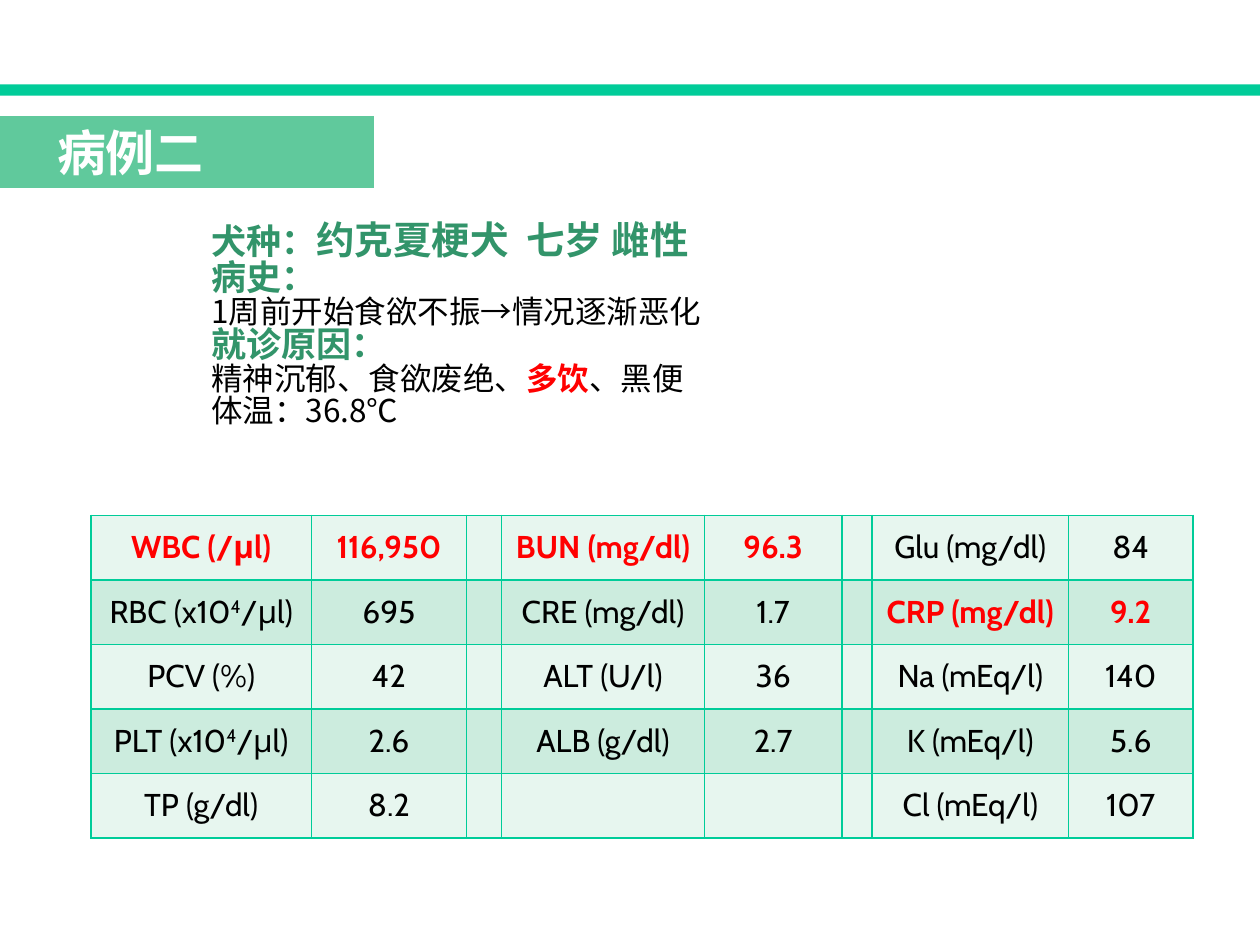
from lxml import etree
from pptx import Presentation
from pptx.dml.color import RGBColor
from pptx.enum.shapes import MSO_SHAPE
from pptx.enum.text import MSO_ANCHOR, MSO_AUTO_SIZE, PP_ALIGN
from pptx.oxml.ns import qn
from pptx.util import Cm, Pt

RECT = MSO_SHAPE.RECTANGLE
MIDDLE = MSO_ANCHOR.MIDDLE
FIXED = MSO_AUTO_SIZE.NONE
LEFT, CENTER = PP_ALIGN.LEFT, PP_ALIGN.CENTER

THEME = {
    "bar": "00CC99", "tag": "60C99C", "bands": ("E7F6EF", "CCECDE"),
    "latin": "Cabin", "asian": "Noto Sans CJK SC",
    "title": (28, "FFFFFF", True), "lead": (22, "32946A", True),
    "head": (20, "32946A", True), "text": (18, "000000", False),
    "alert": (18, "FF0000", True),
}

TITLE = "病例二"
HISTORY = [
    [("犬种：", "head"), ("约克夏梗犬  七岁 雌性", "lead")],
    [("病史：", "head")],
    [("1周前开始食欲不振→情况逐渐恶化", "text")],
    [("就诊原因：", "head")],
    [("精神沉郁、食欲废绝、", "text"), ("多饮", "alert"), ("、黑便", "text")],
    [("体温：36.8℃", "text")],
]
TESTS = [
    ["WBC (/μl)", "116,950", "", "BUN (mg/dl)", "96.3", "", "Glu (mg/dl)", "84"],
    ["RBC (x10^4^/μl)", "695", "", "CRE (mg/dl)", "1.7", "", "CRP (mg/dl)", "9.2"],
    ["PCV (%)", "42", "", "ALT (U/l)", "36", "", "Na (mEq/l)", "140"],
    ["PLT (x10^4^/μl)", "2.6", "", "ALB (g/dl)", "2.7", "", "K (mEq/l)", "5.6"],
    ["TP (g/dl)", "8.2", "", "", "", "", "Cl (mEq/l)", "107"],
]
ALERTS = {"WBC (/μl)", "116,950", "BUN (mg/dl)", "96.3", "CRP (mg/dl)", "9.2"}
WIDTHS = [4.45, 3.12, 0.71, 4.09, 2.77, 0.61, 3.96, 2.51]
ROW = 1.3


def paint(fill, color):
    fill.solid()
    fill.fore_color.rgb = RGBColor.from_string(color)


def add_run(para, text, style, face):
    run = para.add_run()
    run.text = text
    size, color, bold = THEME[style]
    font = run.font
    font.size, font.bold, font.name = Pt(size), bold, THEME[face]
    font.color.rgb = RGBColor.from_string(color)
    props = run._r.get_or_add_rPr()
    etree.SubElement(props, qn("a:ea"), typeface=THEME["asian"])
    return props


def add_edges(cell):
    props = cell._tc.get_or_add_tcPr()
    for spot, side in enumerate(("lnL", "lnR", "lnT", "lnB")):
        line = etree.Element(qn(f"a:{side}"), w=str(Pt(1)))
        fill = etree.SubElement(line, qn("a:solidFill"))
        etree.SubElement(fill, qn("a:srgbClr"), val=THEME["bar"])
        props.insert(spot, line)


def add_bar(slide, width):
    bar = slide.shapes.add_shape(RECT, 0, Cm(1.7), width, Cm(0.23))
    bar.shadow.inherit = False
    paint(bar.fill, THEME["bar"])
    bar.line.fill.background()


def add_title(slide):
    tag = slide.shapes.title
    tag.left, tag.top, tag.width, tag.height = Cm(0), Cm(2.34), Cm(7.54), Cm(1.45)
    paint(tag.fill, THEME["tag"])
    frame = tag.text_frame
    frame.auto_size, frame.vertical_anchor = FIXED, MIDDLE
    frame.margin_left = Cm(1.15)
    frame.margin_top = frame.margin_bottom = 0
    para = frame.paragraphs[0]
    para.alignment = LEFT
    add_run(para, TITLE, "title", "asian")


def add_history(slide):
    box = slide.shapes.add_textbox(Cm(4.01), Cm(4.39), Cm(17.37), Cm(5.31))
    frame = box.text_frame
    frame.word_wrap = True
    for row, parts in enumerate(HISTORY):
        para = frame.add_paragraph() if row else frame.paragraphs[0]
        para.line_spacing = 0.84
        for text, style in parts:
            add_run(para, text, style, "asian")


def add_tests(slide):
    size = Cm(sum(WIDTHS)), Cm(ROW * len(TESTS))
    table = slide.shapes.add_table(
        len(TESTS), len(WIDTHS), Cm(1.83), Cm(10.39), *size).table
    table.first_row = table.horz_banding = False
    for column, width in zip(table.columns, WIDTHS):
        column.width = Cm(width)
    for row, texts in enumerate(TESTS):
        table.rows[row].height = Cm(ROW)
        for col, text in enumerate(texts):
            cell = table.cell(row, col)
            paint(cell.fill, THEME["bands"][row % 2])
            add_edges(cell)
            cell.vertical_anchor = MIDDLE
            para = cell.text_frame.paragraphs[0]
            para.alignment = CENTER
            if not text:
                continue
            style = "alert" if text in ALERTS else "text"
            for spot, part in enumerate(text.split("^")):
                props = add_run(para, part, style, "latin")
                if spot % 2:
                    props.set("baseline", "30000")


def main():
    """Build the case slide with its history and blood test table."""
    deck = Presentation()
    deck.slide_width, deck.slide_height = Cm(25.4), Cm(19.05)
    slide = deck.slides.add_slide(deck.slide_layouts[5])
    add_bar(slide, deck.slide_width)
    add_title(slide)
    add_history(slide)
    add_tests(slide)
    deck.save("out.pptx")


if __name__ == "__main__":
    main()
